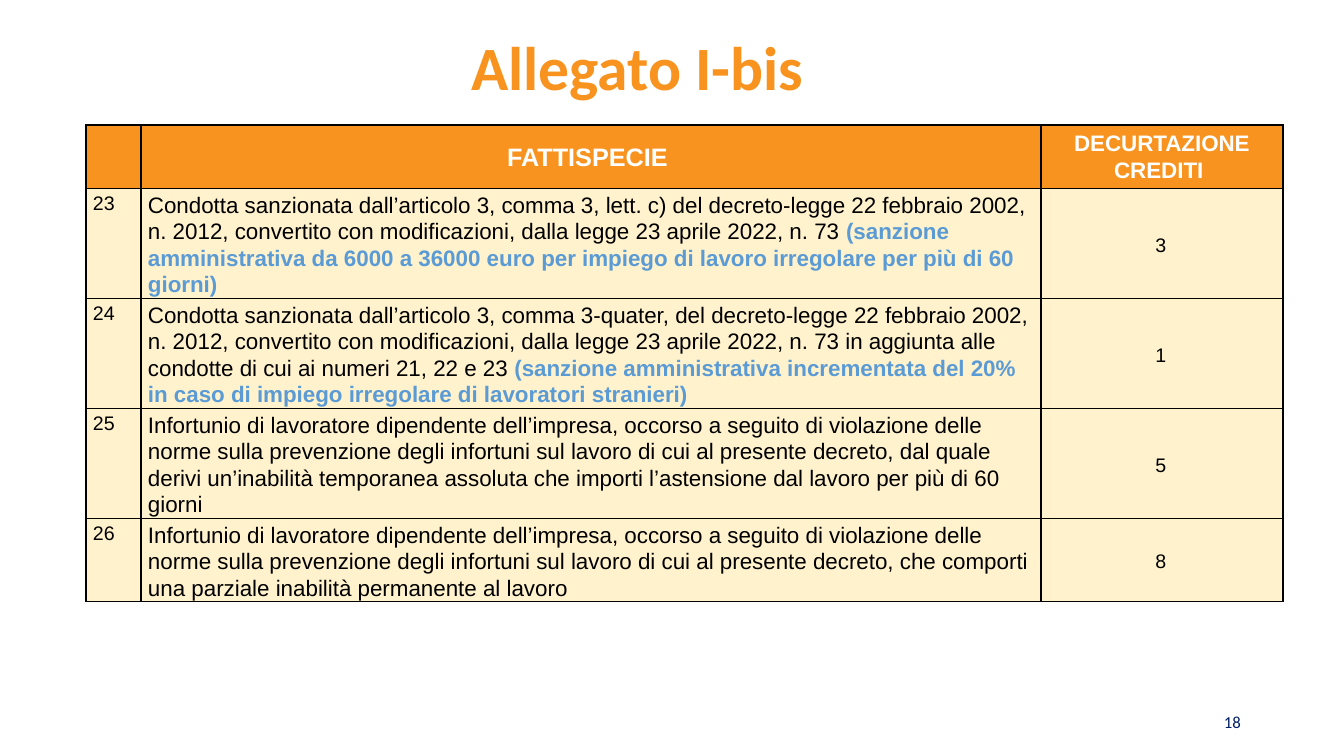
from lxml import etree
from pptx import Presentation
from pptx import util as u
from pptx.dml.color import RGBColor
from pptx.enum import text
from pptx.oxml import ns

ORANGE, CREAM, BLUE, NAVY = "F7931E", "FFF2CC", "5B9BD5", "011F66"
WHITE, BLACK = "FFFFFF", "000000"
LEFT, CENTER, RIGHT = text.PP_ALIGN.LEFT, text.PP_ALIGN.CENTER, text.PP_ALIGN.RIGHT
TOP, MIDDLE, BOTTOM = text.MSO_ANCHOR.TOP, text.MSO_ANCHOR.MIDDLE, text.MSO_ANCHOR.BOTTOM


def rgb(value):
    return RGBColor.from_string(value)


def px(n):
    return u.Emu(round(n * 914400 / 100.8))


class Deck:
    """Slide style and the slide being built."""

    def __init__(self):
        self.prs = Presentation()
        self.prs.slide_width, self.prs.slide_height = px(1344), px(756)
        self.s = self.prs.slides.add_slide(self.prs.slide_layouts[5])

    def add_runs(self, p, runs, size, font, align):
        p.alignment = align
        for content, color, bold in runs:
            r = p.add_run()
            r.text = content
            r.font.name, r.font.size = font, u.Pt(size)
            r.font.bold = bold
            r.font.color.rgb = rgb(color)

    def place(self, sp, box, anchor):
        sp.left, sp.top, sp.width, sp.height = map(px, box)
        tf = sp.text_frame
        tf.word_wrap = True
        tf.auto_size = text.MSO_AUTO_SIZE.NONE
        tf.vertical_anchor = anchor
        return tf.paragraphs[0]

    def title(self, content, box):
        p = self.place(self.s.shapes.title, box, MIDDLE)
        self.add_runs(p, [(content, ORANGE, True)], 44, "Calibri", CENTER)

    def label(self, content, box):
        sp = self.s.shapes.add_textbox(*map(px, box))
        p = self.place(sp, box, BOTTOM)
        self.add_runs(p, [(content, NAVY, False)], 12, "Calibri", RIGHT)

    def borders(self, cell):
        tcPr = cell._tc.get_or_add_tcPr()
        for i, side in enumerate(("lnL", "lnR", "lnT", "lnB")):
            ln = etree.Element(ns.qn("a:" + side), w=str(u.Pt(1)))
            fill = etree.SubElement(ln, ns.qn("a:solidFill"))
            etree.SubElement(fill, ns.qn("a:srgbClr"), val=BLACK)
            tcPr.insert(i, ln)

    def cell(self, cell, runs, size, align, anchor, header):
        cell.fill.solid()
        cell.fill.fore_color.rgb = rgb(ORANGE if header else CREAM)
        self.borders(cell)
        cell.vertical_anchor = anchor
        p = cell.text_frame.paragraphs[0]
        p.line_spacing = 1.07
        if header:
            p.space_after = u.Pt(2)
        else:
            cell.margin_left, cell.margin_right = px(7), px(4)
            cell.margin_top, cell.margin_bottom = px(3), 0
            p.space_after = u.Pt(8)
        self.add_runs(p, runs, size, "Arial", align)

    def table(self, left, top, widths, heights, headers, rows):
        frame = self.s.shapes.add_table(len(heights), len(widths), px(left), px(top),
                                        px(sum(widths)), px(sum(heights)))
        t = frame.table
        t.first_row = t.horz_banding = False
        for col, width in zip(t.columns, widths):
            col.width = px(width)
        for row, height in zip(t.rows, heights):
            row.height = px(height)
        for c, (content, size) in enumerate(headers):
            runs = [(content, WHITE, True)] if content else []
            self.cell(t.cell(0, c), runs, size, CENTER, MIDDLE, True)
        for i, (number, case, penalty, credits) in enumerate(rows, 1):
            case_runs = [(case, BLACK, False)]
            if penalty:
                case_runs.append((penalty, BLUE, True))
            self.cell(t.cell(i, 0), [(number, BLACK, False)], 14, LEFT, TOP, False)
            self.cell(t.cell(i, 1), case_runs, 16, LEFT, TOP, False)
            self.cell(t.cell(i, 2), [(credits, BLACK, False)], 14, CENTER, MIDDLE, False)


HEADERS = [("", 18), ("FATTISPECIE ", 18), ("DECURTAZIONE CREDITI ", 16)]
INJURY = ("Infortunio di lavoratore dipendente dell’impresa, occorso a seguito di violazione "
          "delle norme sulla prevenzione degli infortuni sul lavoro di cui al presente decreto, ")
ROWS = [
    ("23",
     "Condotta sanzionata dall’articolo 3, comma 3, lett. c) del decreto-legge 22 febbraio "
     "2002, n. 2012, convertito con modificazioni, dalla legge 23 aprile 2022, n. 73 ",
     "(sanzione amministrativa da 6000 a 36000 euro per impiego di lavoro irregolare "
     "per più di 60 giorni)", "3 "),
    ("24",
     "Condotta sanzionata dall’articolo 3, comma 3-quater, del decreto-legge 22 febbraio "
     "2002, n. 2012, convertito con modificazioni, dalla legge 23 aprile 2022, n. 73 "
     "in aggiunta alle condotte di cui ai numeri 21, 22 e 23 ",
     "(sanzione amministrativa incrementata del 20% in caso di impiego irregolare "
     "di lavoratori stranieri)", "1 "),
    ("25",
     INJURY + "dal quale derivi un’inabilità temporanea assoluta che importi l’astensione "
     "dal lavoro per più di 60 giorni", "", "5 "),
    ("26",
     INJURY + "che comporti una parziale inabilità permanente al lavoro", "", "8 "),
]


def main():
    deck = Deck()
    deck.label("18", (1131, 697, 120, 40))
    deck.title("Allegato I-bis", (48, 29, 1179, 74))
    deck.table(86, 125, (55, 900, 242), (63, 110, 110, 110, 83), HEADERS, ROWS)
    deck.prs.save("out.pptx")


if __name__ == "__main__":
    main()
